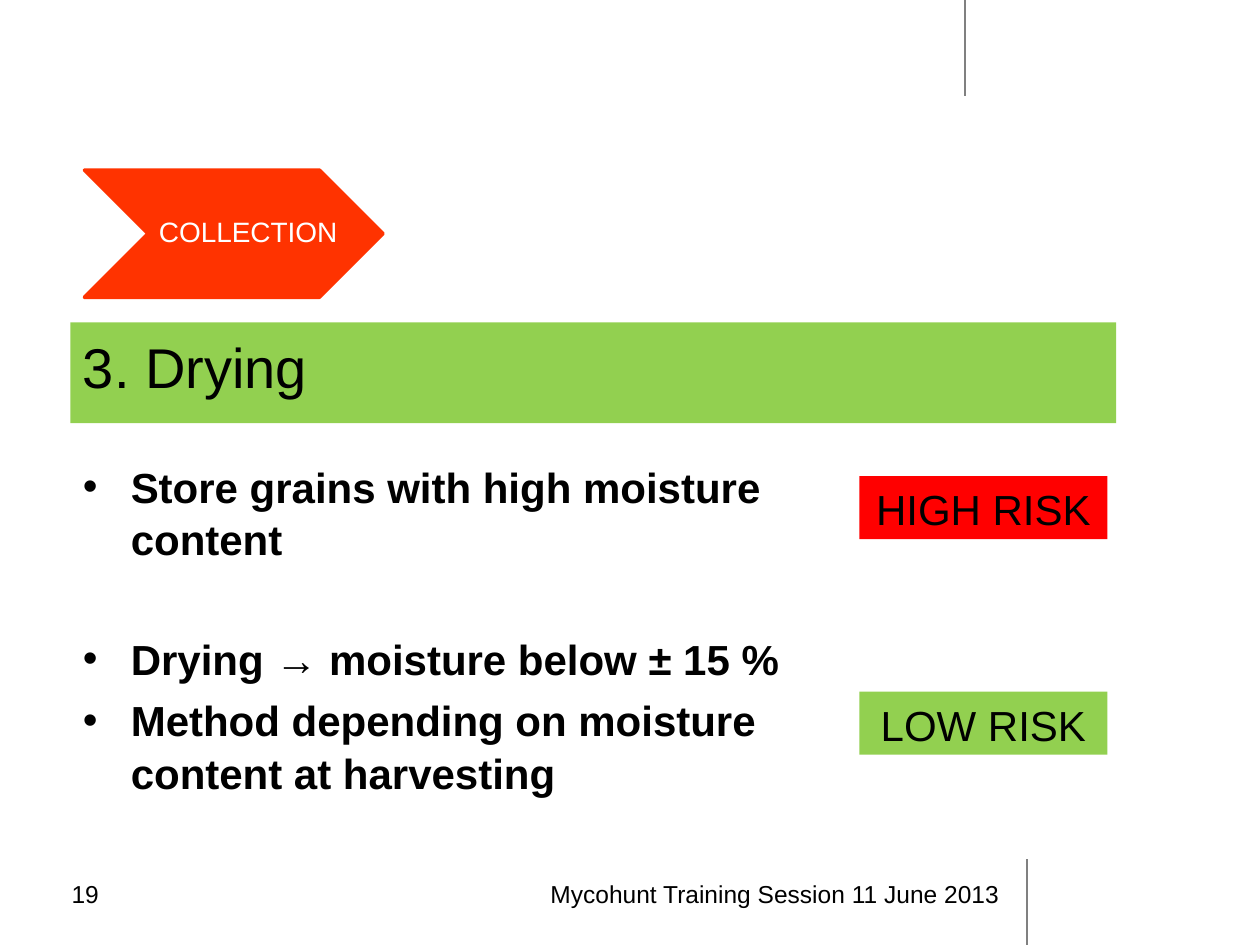
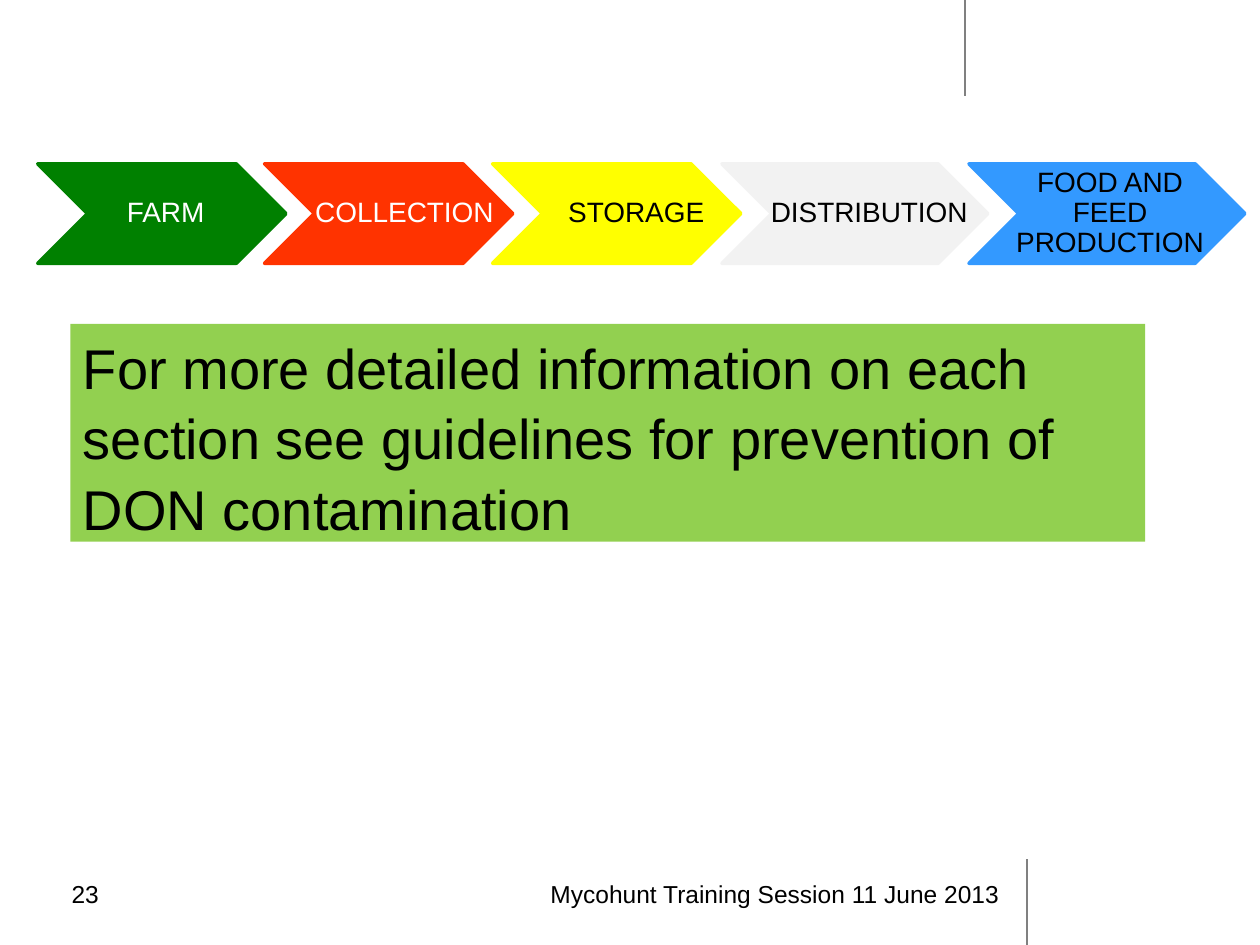
from dataclasses import dataclass

from lxml import etree
from pptx import Presentation
from pptx.dml.color import RGBColor
from pptx.enum import shapes, text
from pptx.oxml.ns import qn
from pptx.util import Inches, Pt


@dataclass(frozen=True)
class Theme:
    font: str = "Arial"
    black: str = "000000"
    white: str = "FFFFFF"
    rule: str = "808080"
    band: str = "92D050"
    high_risk: str = "FF0000"
    farm: str = "008000"
    collection: str = "FF3300"
    storage: str = "FFFF00"
    distribution: str = "F2F2F2"
    production: str = "3399FF"
    title_size: int = 32
    body_size: int = 24
    chain_size: int = 16
    footer_size: int = 14
    line_spacing: float = 1.05


THEME = Theme()
LEFT, CENTER, RIGHT = text.PP_ALIGN.LEFT, text.PP_ALIGN.CENTER, text.PP_ALIGN.RIGHT
TOP, MIDDLE = text.MSO_ANCHOR.TOP, text.MSO_ANCHOR.MIDDLE


def box(left, top, width, height):
    return [Inches(value) for value in (left, top, width, height)]


def write(shape, *lines, size, color=THEME.black, bold=False, align=LEFT,
          anchor=TOP, spacing=THEME.line_spacing, margins=(0.1, 0.05),
          bulleted=False, space_before=()):
    """Fill a shape with one paragraph per line; space_before lists points."""
    frame = shape.text_frame
    frame.word_wrap = True
    frame.vertical_anchor = anchor
    frame.margin_left = frame.margin_right = Inches(margins[0])
    frame.margin_top = frame.margin_bottom = Inches(margins[1])
    for index, line in enumerate(lines):
        paragraph = frame.add_paragraph() if index else frame.paragraphs[0]
        paragraph.text = line
        paragraph.alignment = align
        paragraph.line_spacing = spacing
        if index and space_before:
            paragraph.space_before = Pt(space_before[index - 1])
        if bulleted:
            add_bullet(paragraph)
        font = paragraph.font
        font.name, font.size, font.bold = THEME.font, Pt(size), bold
        font.color.rgb = RGBColor.from_string(color)


def add_bullet(paragraph, indent=0.38):
    properties = paragraph._p.get_or_add_pPr()
    properties.set("marL", str(Inches(indent)))
    properties.set("indent", str(-Inches(indent)))
    etree.SubElement(properties, qn("a:buFont")).set("typeface", THEME.font)
    etree.SubElement(properties, qn("a:buChar")).set("char", "•")


def add_text(slide, area, *lines, **style):
    write(slide.shapes.add_textbox(*box(*area)), *lines, **style)


def add_filled(slide, kind, area, fill, outline=None):
    shape = slide.shapes.add_shape(kind, *box(*area))
    shape.shadow.inherit = False
    shape.fill.solid()
    shape.fill.fore_color.rgb = RGBColor.from_string(fill)
    if outline:
        shape.line.color.rgb = RGBColor.from_string(fill)
        shape.line.width = Pt(outline)
    else:
        shape.line.fill.background()
    return shape


def add_band(slide, area, title):
    band = add_filled(slide, shapes.MSO_SHAPE.RECTANGLE, area, THEME.band)
    write(band, title, size=THEME.title_size)


def add_risk_label(slide, top, label, fill):
    area = (6.82, top, 1.97, 0.5)
    shape = add_filled(slide, shapes.MSO_SHAPE.RECTANGLE, area, fill)
    write(shape, label, size=THEME.body_size, align=CENTER, anchor=MIDDLE)


def add_stage(slide, area, label, label_left, label_width, fill, color=THEME.black):
    """Chevron of the supply chain with its label laid over it."""
    add_filled(slide, shapes.MSO_SHAPE.CHEVRON, area, fill, outline=2)
    _, top, _, height = area
    add_text(slide, (label_left, top, label_width, height), label,
             size=THEME.chain_size, color=color, align=CENTER, anchor=MIDDLE,
             spacing=0.9, margins=(0, 0.02))


def add_rule(slide, x, top, bottom):
    rule = slide.shapes.add_connector(
        shapes.MSO_CONNECTOR.STRAIGHT, Inches(x), Inches(top), Inches(x), Inches(bottom))
    rule.line.color.rgb = RGBColor.from_string(THEME.rule)
    rule.line.width = Pt(0.75)
    etree.SubElement(rule._element.spPr, qn("a:effectLst"))


def add_base_slide(presentation, number):
    """Blank slide with the shared rules, page number and footer."""
    slide = presentation.slides.add_slide(presentation.slide_layouts[6])
    add_rule(slide, 8.15, 6.82, 7.5)
    add_rule(slide, 7.66, 0, 0.76)
    footer = dict(size=THEME.footer_size, anchor=MIDDLE)
    add_text(slide, (3.2, 6.83, 4.83, 0.52),
             "Mycohunt Training Session 11 June 2013", align=RIGHT, **footer)
    add_text(slide, (0.47, 6.83, 0.86, 0.52), str(number), **footer)
    return slide


def build_drying(presentation):
    slide = add_base_slide(presentation, 19)
    add_band(slide, (0.56, 2.56, 8.3, 0.8), "3. Drying")
    add_text(slide, (0.56, 3.59, 6.8, 3.1),
             "Store grains with high moisture content",
             "Drying → moisture below ± 15 %",
             "Method depending on moisture content at harvesting",
             size=THEME.body_size, bold=True, bulleted=True, space_before=(38, 4.8))
    add_risk_label(slide, 3.78, "HIGH RISK", THEME.high_risk)
    add_risk_label(slide, 5.49, "LOW RISK", THEME.band)
    add_stage(slide, (0.67, 1.35, 2.37, 1.01), "COLLECTION", 1.22, 1.5,
              THEME.collection, THEME.white)


def build_guidelines(presentation):
    slide = add_base_slide(presentation, 23)
    add_band(slide, (0.56, 2.57, 8.53, 1.73),
             "For more detailed information on each section see guidelines "
             "for prevention of DON contamination")
    stages = [
        (0.3, 1.97, "FARM", 0.53, 1.57, THEME.farm, THEME.white),
        (2.1, 1.97, "COLLECTION", 2.42, 1.58, THEME.collection, THEME.white),
        (3.91, 1.97, "STORAGE", 4.46, 1.18, THEME.storage),
        (5.73, 2.11, "DISTRIBUTION", 6.1, 1.6, THEME.distribution),
        (7.69, 2.19, "FOOD AND\vFEED PRODUCTION", 7.84, 1.94, THEME.production),
    ]
    for left, width, *label in stages:
        add_stage(slide, (left, 1.3, width, 0.79), *label)


def main():
    presentation = Presentation()
    presentation.slide_width, presentation.slide_height = Inches(10), Inches(7.5)
    build_drying(presentation)
    build_guidelines(presentation)
    presentation.save("out.pptx")


if __name__ == "__main__":
    main()
